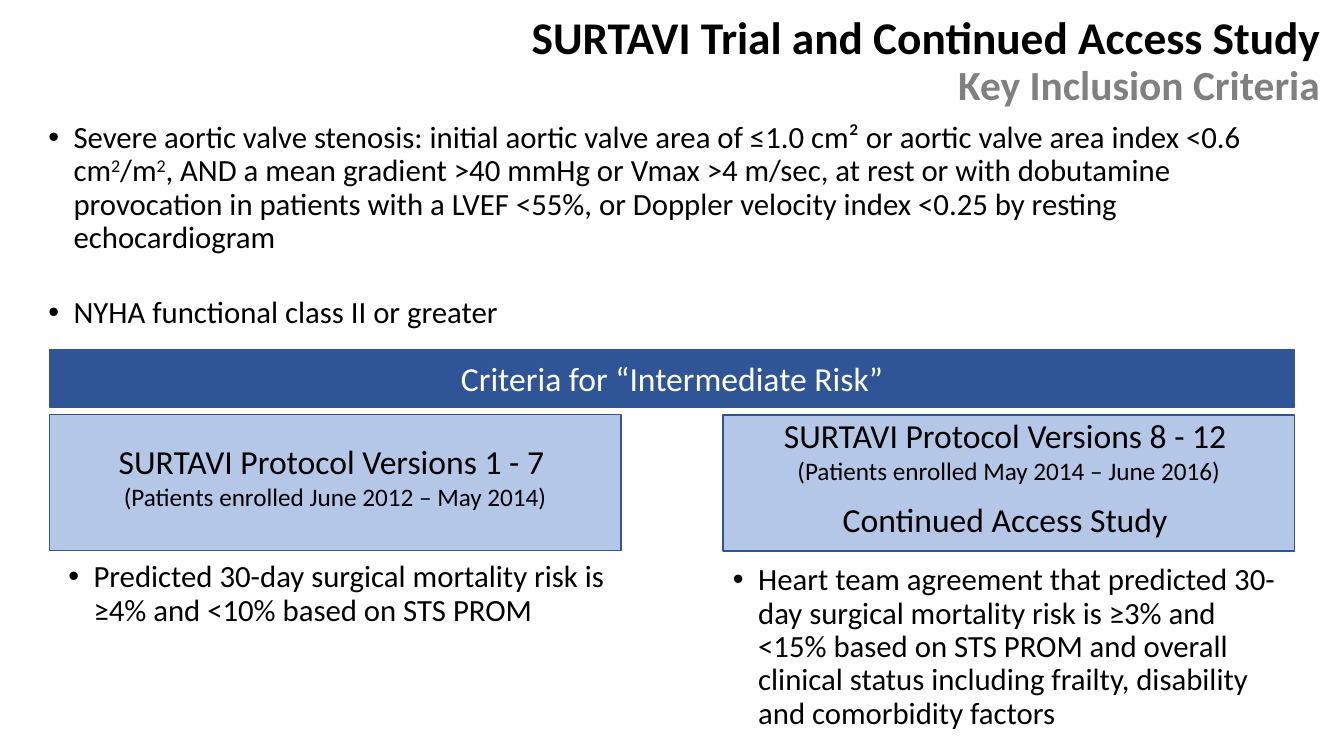
"""Build the slide of key inclusion criteria for the SURTAVI trial."""
from lxml.etree import SubElement
from pptx import Presentation
from pptx.dml.color import RGBColor
from pptx.enum.shapes import MSO_SHAPE
from pptx.enum.text import MSO_ANCHOR, MSO_AUTO_SIZE, PP_ALIGN
from pptx.oxml.ns import qn
from pptx.util import Inches, Pt

COLORS = {"text": "000000", "subtitle": "808080", "banner": "2F5597",
          "card": "B4C7E7", "outline": "325491", "light": "FFFFFF"}

deck = Presentation()
deck.slide_width, deck.slide_height = Inches(13.33), Inches(7.5)
page = deck.slides.add_slide(deck.slide_layouts[1])
COLUMN, ROW = deck.slide_width / 100, deck.slide_height / 100


def grid(left, top, width, height):
    """Turn columns and rows, each a hundredth of the slide, into lengths."""
    return int(left * COLUMN), int(top * ROW), int(width * COLUMN), int(height * ROW)


def style(para, size, color="text", align=PP_ALIGN.LEFT, bullet=False, bold=False):
    """Format a paragraph and its runs, with a hanging bullet on request."""
    para.alignment = align
    for span in para.runs:
        span.font.name, span.font.size, span.font.bold = "Calibri", Pt(size), bold
        span.font.color.rgb = RGBColor.from_string(COLORS[color])
    if bullet:
        para.line_spacing = 0.9
        properties = para._p.get_or_add_pPr()
        properties.set("marL", str(Inches(0.25)))
        properties.set("indent", str(-Inches(0.25)))
        SubElement(properties, qn("a:buFont")).set("typeface", "Arial")
        SubElement(properties, qn("a:buChar")).set("char", "•")


title = page.shapes.title
title.left, title.top, title.width, title.height = grid(28.13, 1.07, 70.89, 14.4)
title.text_frame.text = "SURTAVI Trial and Continued Access Study\vKey Inclusion Criteria"
title.text_frame.auto_size = MSO_AUTO_SIZE.NONE
title.text_frame.vertical_anchor = MSO_ANCHOR.MIDDLE
heading = title.text_frame.paragraphs[0]
style(heading, 32.4, align=PP_ALIGN.RIGHT, bold=True)
heading.line_spacing = 0.9
subtitle = heading.runs[1]
subtitle.font.size = Pt(29.6)
subtitle.font.color.rgb = RGBColor.from_string(COLORS["subtitle"])

body = page.placeholders[1]
body.left, body.top, body.width, body.height = grid(2.85, 15.47, 94.3, 24.4)
body.text_frame.auto_size = MSO_AUTO_SIZE.NONE
stenosis = body.text_frame.paragraphs[0]
stenosis_parts = [
    "Severe aortic valve stenosis: initial aortic valve area of ≤1.0 cm² "
    "or aortic valve area index <0.6 cm", "2", "/m", "2",
    ", AND a mean gradient >40 mmHg or Vmax >4 m/sec, at rest or with dobutamine "
    "provocation in patients with a LVEF <55%, or Doppler velocity index <0.25 "
    "by resting echocardiogram"]
for part in stenosis_parts:
    span = stenosis.add_run()
    span.text = part
    if part == "2":
        span._r.get_or_add_rPr().set("baseline", "30000")
functional_class = body.text_frame.add_paragraph()
functional_class.text = "NYHA functional class II or greater"
for para, gap in ((stenosis, 0), (functional_class, 30)):
    para.space_before = Pt(gap)
    style(para, 22, bullet=True)

LEFT, FULL, CARD = 3.68, 92.65, 42.53
RIGHT = LEFT + FULL - CARD
panels = [
    (grid(LEFT, 54.8, CARD, 18), "card", "text",
     [("SURTAVI Protocol Versions 1 - 7 ", 24, 0),
      ("(Patients enrolled June 2012 – May 2014)", 18, 0)]),
    (grid(RIGHT, 54.9, CARD, 18), "card", "text",
     [("SURTAVI Protocol Versions 8 - 12 ", 24, 0),
      ("(Patients enrolled May 2014 – June 2016)", 18, 0),
      ("Continued Access Study ", 24, 10)]),
    (grid(LEFT, 46.27, FULL, 7.6), "banner", "light",
     [("Criteria for “Intermediate Risk”", 24, 0)]),
]
for place, fill, color, lines in panels:
    box = page.shapes.add_shape(MSO_SHAPE.RECTANGLE, *place)
    box.shadow.inherit = False
    box.fill.solid()
    box.fill.fore_color.rgb = RGBColor.from_string(COLORS[fill])
    box.line.color.rgb = RGBColor.from_string(COLORS["outline"])
    box.line.width = Pt(1)
    frame = box.text_frame
    frame.word_wrap = True
    frame.vertical_anchor = MSO_ANCHOR.MIDDLE
    if fill == "card":
        frame.margin_top, frame.margin_bottom = 0, int(1.6 * ROW)
    frame.text = "\n".join(text for text, size, gap in lines)
    for para, (text, size, gap) in zip(frame.paragraphs, lines):
        para.space_before = Pt(gap)
        style(para, size, color, PP_ALIGN.CENTER)

risks = [
    (grid(4.35, 73.6, CARD, 12.53),
     "Predicted 30-day surgical mortality risk is ≥4% and <10% based on STS PROM"),
    (grid(RIGHT, 74, CARD, 24.53),
     "Heart team agreement that predicted 30-day surgical mortality risk is ≥3% and "
     "<15% based on STS PROM and overall clinical status including frailty, "
     "disability and comorbidity factors"),
]
for place, text in risks:
    box = page.shapes.add_textbox(*place)
    box.text_frame.word_wrap = True
    box.text_frame.text = text
    style(box.text_frame.paragraphs[0], 22, bullet=True)

deck.save("out.pptx")
